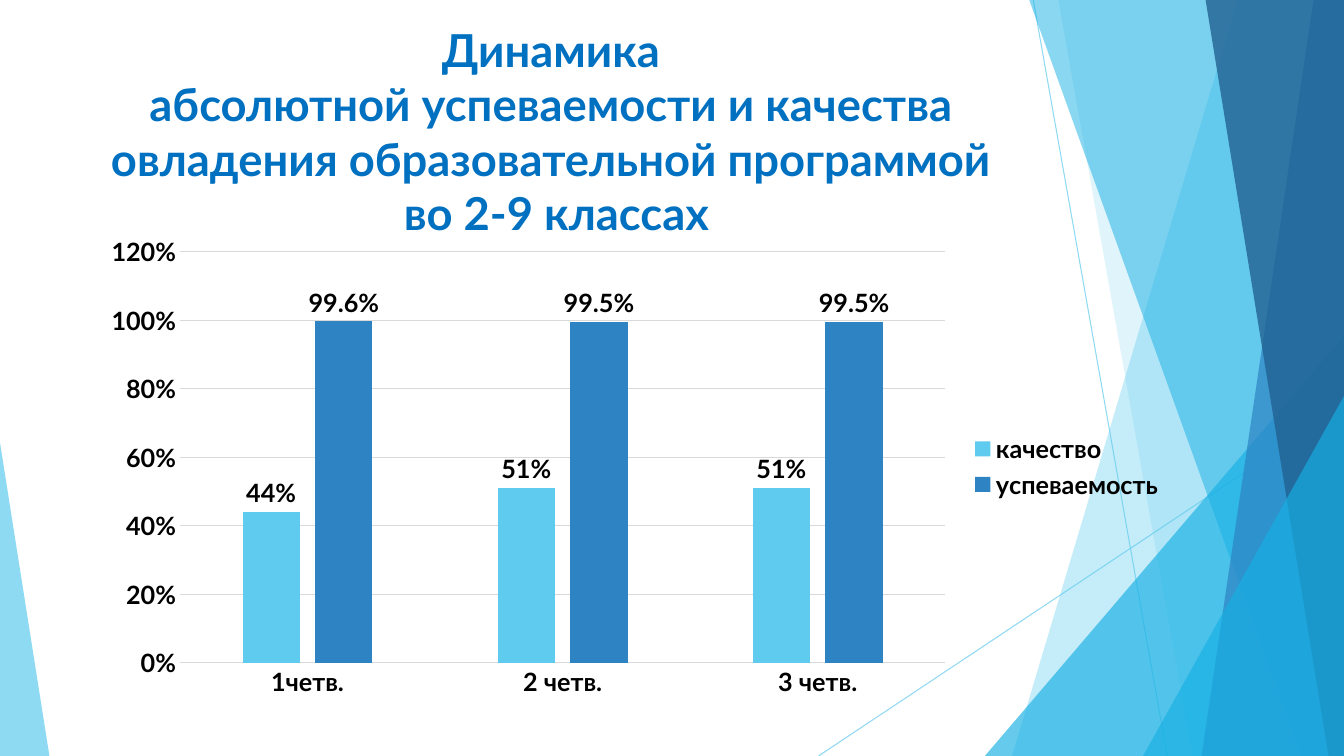
from lxml.etree import SubElement
from pptx import Presentation
from pptx.chart.data import CategoryChartData
from pptx.dml.color import RGBColor
from pptx.enum.chart import XL_CHART_TYPE, XL_LABEL_POSITION, XL_LEGEND_POSITION, XL_TICK_MARK
from pptx.enum.shapes import MSO_CONNECTOR, MSO_SHAPE
from pptx.enum.text import MSO_ANCHOR, MSO_AUTO_SIZE, PP_ALIGN
from pptx.oxml.ns import qn
from pptx.util import Inches, Pt

W, H = Inches(13.33), Inches(7.5)
FONT = "Lato"
COLORS = {
    "sky": "5FCBEF",
    "cyan": "17B0E4",
    "blue": "2E83C3",
    "navy": "226292",
    "title": "0070C0",
    "text": "000000",
    "grid": "D9D9D9",
}


def rgb(name):
    return RGBColor.from_string(COLORS[name])


def x(percent):
    return round(W * percent / 100)


def y(percent):
    return round(H * percent / 100)


def box(left, top, width, height):
    return x(left), y(top), x(width), y(height)


def set_alpha(fill_parent, percent):
    color = fill_parent.find(".//" + qn("a:srgbClr"))
    SubElement(color, qn("a:alpha")).set("val", str(percent * 1000))


def paint(sp, color, alpha):
    sp.shadow.inherit = False
    sp.fill.solid()
    sp.fill.fore_color.rgb = rgb(color)
    set_alpha(sp._element.spPr, alpha)
    sp.line.fill.background()


def add_thin_line(s, x1, y1, x2, y2):
    line = s.shapes.add_connector(MSO_CONNECTOR.STRAIGHT, x(x1), y(y1), x(x2), y(y2))
    line.line.color.rgb = rgb("sky")
    line.line.width = Pt(0.75)
    set_alpha(line._element.spPr, 70)
    SubElement(line._element.spPr, qn("a:effectLst"))


def add_band(s, top_x, bottom_x, color, alpha):
    builder = s.shapes.build_freeform(x(top_x), 0)
    builder.add_line_segments([(W, 0), (W, H), (x(bottom_x), H)])
    paint(builder.convert_to_shape(), color, alpha)


def add_corner(s, left, top, width, apex, color, alpha):
    sp = s.shapes.add_shape(MSO_SHAPE.ISOSCELES_TRIANGLE, *box(left, top, width, 100 - top))
    sp.adjustments[0] = apex
    paint(sp, color, alpha)


def add_backdrop(s):
    add_thin_line(s, 76.88, 0, 86.85, 100)
    add_thin_line(s, 100, 53.73, 60.9, 100)
    add_band(s, 92.1, 75.3, "sky", 36)
    add_band(s, 78.75, 88.73, "sky", 20)
    add_corner(s, 73.28, 44.4, 26.72, 1, "cyan", 66)
    add_band(s, 76.58, 96.83, "cyan", 50)
    add_band(s, 97.73, 89.4, "blue", 70)
    add_band(s, 89.7, 98.85, "navy", 80)
    add_corner(s, 85.05, 52.4, 14.95, 1, "cyan", 66)
    add_corner(s, 0, 58.53, 3.68, 0, "sky", 70)


def style_font(font, size, color):
    font.name = FONT
    font.size = Pt(size)
    font.bold = True
    font.color.rgb = rgb(color)


def fill_title(s, lines):
    sp = s.shapes.title
    sp.left, sp.top, sp.width, sp.height = box(2.78, 2.27, 77.25, 32.67)
    tf = sp.text_frame
    tf.word_wrap = True
    tf.auto_size = MSO_AUTO_SIZE.NONE
    tf.vertical_anchor = MSO_ANCHOR.TOP
    p = tf.paragraphs[0]
    p.alignment = PP_ALIGN.CENTER
    for i, line in enumerate(lines):
        if i:
            p.add_line_break()
        r = p.add_run()
        r.text = line
        style_font(r.font, 32.4, "title")


def style_axis(axis):
    axis.major_tick_mark = axis.minor_tick_mark = XL_TICK_MARK.NONE
    style_font(axis.tick_labels.font, 18, "text")


def style_line(line):
    line.color.rgb = rgb("grid")
    line.width = Pt(0.75)


def add_results_chart(s, categories, series):
    data = CategoryChartData()
    data.categories = categories
    for name, values, fmt, color in series:
        data.add_series(name, values, fmt)
    frame = s.shapes.add_chart(
        XL_CHART_TYPE.COLUMN_CLUSTERED, *box(6.68, 30, 80.72, 63.47), data)
    chart = frame.chart
    chart.has_title = False
    style_font(chart.font, 18, "text")

    style_axis(chart.category_axis)
    style_line(chart.category_axis.format.line)
    axis = chart.value_axis
    style_axis(axis)
    axis.minimum_scale, axis.maximum_scale, axis.major_unit = 0, 1.2, 0.2
    axis.tick_labels.number_format = "0%"
    axis.tick_labels.number_format_is_linked = False
    axis.format.line.fill.background()
    style_line(axis.major_gridlines.format.line)

    chart.has_legend = True
    chart.legend.position = XL_LEGEND_POSITION.RIGHT
    chart.legend.include_in_layout = False
    style_font(chart.legend.font, 18, "text")

    plot = chart.plots[0]
    plot.gap_width, plot.overlap = 219, -27
    plot.vary_by_categories = False
    for bars, (name, values, fmt, color) in zip(plot.series, series):
        bars.format.fill.solid()
        bars.format.fill.fore_color.rgb = rgb(color)
        labels = bars.data_labels
        labels.show_value = True
        labels.number_format = fmt
        labels.number_format_is_linked = False
        labels.position = XL_LABEL_POSITION.OUTSIDE_END
        style_font(labels.font, 18, "text")


def main():
    prs = Presentation()
    prs.slide_width, prs.slide_height = W, H
    s = prs.slides.add_slide(prs.slide_layouts[5])
    add_backdrop(s)
    fill_title(s, [
        "Динамика ",
        "абсолютной успеваемости и качества ",
        "овладения образовательной программой ",
        "во 2-9 классах",
    ])
    add_results_chart(s, ["1четв.", "2 четв.", "3 четв."], [
        ("качество", [0.44, 0.51, 0.51], "0%", "sky"),
        ("успеваемость", [0.996, 0.995, 0.995], "0.0%", "blue"),
    ])
    prs.save("out.pptx")


if __name__ == "__main__":
    main()
